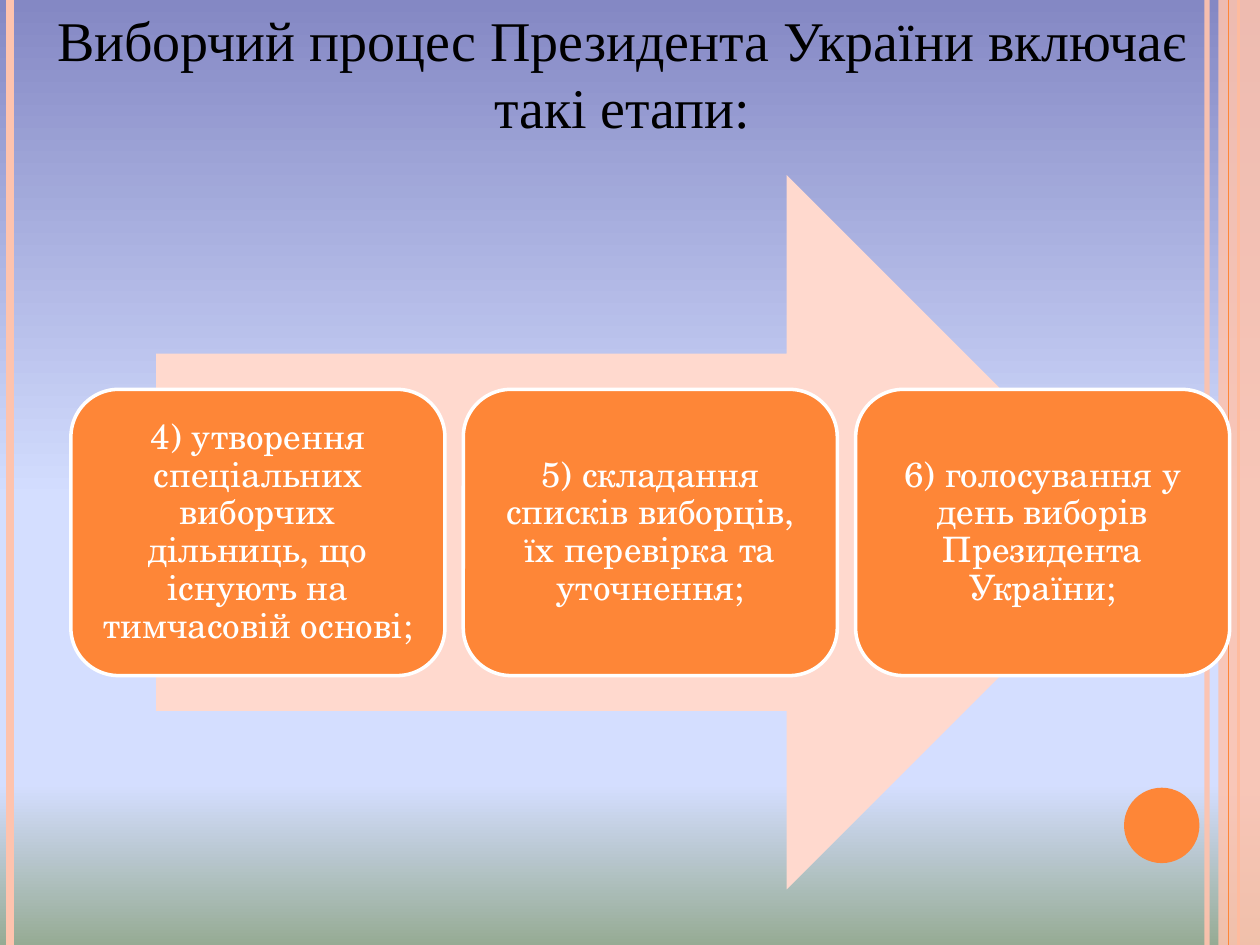
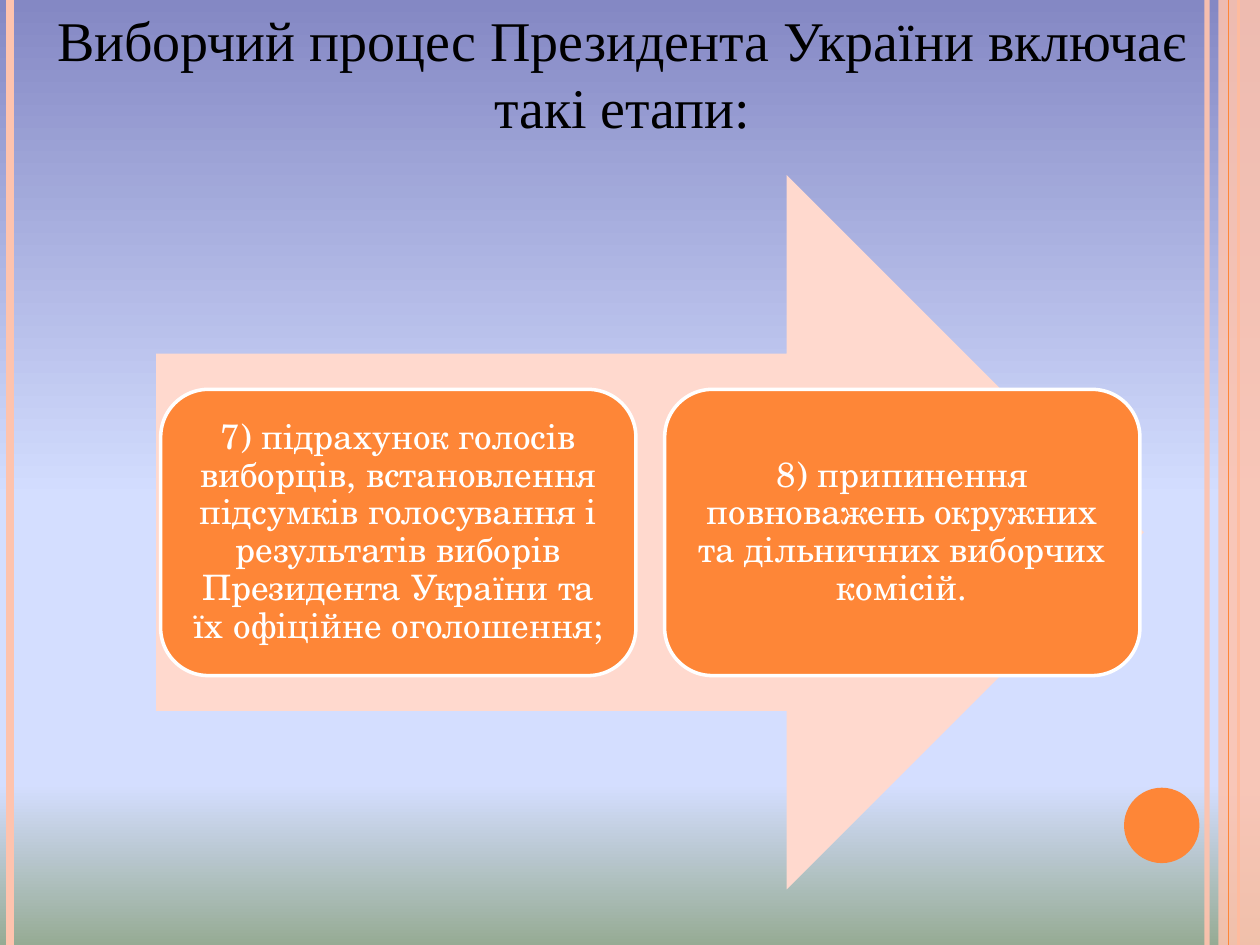
import copy

import pptx
import pptx.dml.color
import pptx.enum.shapes
import pptx.enum.text
import pptx.oxml
import pptx.oxml.ns
import pptx.util
from pptx.util import Cm

SLIDE_WIDTH, SLIDE_HEIGHT = 25.4, 19.05
SHAPES = pptx.enum.shapes.MSO_SHAPE
COLOURS = {
    "sky": "8488C4",
    "haze": "D4DEFF",
    "grass": "96AB94",
    "orange": "FE8637",
    "peach": "FEC3AE",
    "pale": "FFD9CE",
    "white": "FFFFFF",
    "black": "000000",
}
BACKGROUND = [(0, "sky"), (53, "haze"), (83, "haze"), (100, "grass")]
TITLE = "Виборчий процес Президента України включає такі етапи:"
TITLE_FONT = {"name": "Times New Roman", "size": pptx.util.Pt(32)}
CARD_FONT = {"name": "TeX Gyre Schola", "size": pptx.util.Pt(20)}
ROW_CENTRE, CARD_TOP, CARD_HEIGHT = 13.11, 7.85, 5.77

STAGES = [
    {
        "width": 7.54,
        "gap": 0.37,
        "texts": [
            "4) утворення спеціальних виборчих дільниць, що існують на тимчасовій основі;",
            "5) складання списків виборців, їх перевірка та уточнення;",
            "6) голосування у день виборів Президента України;",
        ],
    },
    {
        "width": 9.58,
        "gap": 0.58,
        "texts": [
            "7) підрахунок голосів виборців, встановлення підсумків голосування і "
            "результатів виборів Президента України та їх офіційне оголошення;",
            "8) припинення повноважень окружних та дільничних виборчих комісій.",
        ],
    },
]


def apply(target, values):
    for name, value in values.items():
        setattr(target, name, value)


def rgb(colour):
    return pptx.dml.color.RGBColor.from_string(COLOURS[colour])


def set_opacity(fill_parent, percent):
    for colour in fill_parent.xpath(".//a:srgbClr"):
        alpha = pptx.oxml.parse_xml(
            f'<a:alpha {pptx.oxml.ns.nsdecls("a")} val="{percent * 1000}"/>'
        )
        colour.append(alpha)


class Slides:
    def __init__(self):
        self.deck = pptx.Presentation()
        apply(self.deck, {"slide_width": Cm(SLIDE_WIDTH), "slide_height": Cm(SLIDE_HEIGHT)})
        self.page = None

    def add_page(self):
        self.page = self.deck.slides.add_slide(self.deck.slide_layouts[6])
        self.background()
        self.side_bands()

    def background(self):
        fill = self.page.background.fill
        fill.gradient()
        fill.gradient_angle = 270
        stop_list = self.page.element.xpath(".//a:gsLst")[0]
        while len(stop_list) < len(BACKGROUND):
            stop_list.append(copy.deepcopy(stop_list[0]))
        for stop, (position, colour) in zip(fill.gradient_stops, BACKGROUND):
            stop.position = position / 100
            stop.color.rgb = rgb(colour)

    def side_bands(self):
        self.vertical_line(24.33, "peach", 3, 93)
        self.vertical_line(0.2, "peach", 4.5)
        self.vertical_line(24.97, "orange", 1.5)
        band = self.shape(SHAPES.RECTANGLE, 24.56, 0, 0.84, SLIDE_HEIGHT, "peach")
        set_opacity(band.element.spPr, 87)
        self.vertical_line(24.77, "orange", 0.75)
        self.shape(SHAPES.OVAL, 22.66, 15.88, 1.52, 1.52, "orange")

    def vertical_line(self, x, colour, weight, opacity=100):
        line = self.page.shapes.add_connector(
            pptx.enum.shapes.MSO_CONNECTOR.STRAIGHT, Cm(x), 0, Cm(x), Cm(SLIDE_HEIGHT)
        )
        line.line.color.rgb = rgb(colour)
        line.line.width = pptx.util.Pt(weight)
        properties = line.element.spPr
        if opacity < 100:
            set_opacity(properties, opacity)
        properties.append(pptx.oxml.parse_xml(f'<a:effectLst {pptx.oxml.ns.nsdecls("a")}/>'))

    def shape(self, kind, left, top, width, height, fill, outline=None):
        box = self.page.shapes.add_shape(kind, Cm(left), Cm(top), Cm(width), Cm(height))
        box.shadow.inherit = False
        box.fill.solid()
        box.fill.fore_color.rgb = rgb(fill)
        if outline:
            box.line.color.rgb = rgb(outline)
            box.line.width = pptx.util.Pt(2)
        else:
            box.line.fill.background()
        return box

    def add_text(self, box, text, font, colour, spacing=1.0, frame_format=None):
        frame = box.text_frame
        middle = pptx.enum.text.MSO_ANCHOR.MIDDLE
        apply(frame, {"word_wrap": True, "vertical_anchor": middle, **(frame_format or {})})
        para = frame.paragraphs[0]
        apply(para, {"alignment": pptx.enum.text.PP_ALIGN.CENTER, "line_spacing": spacing})
        span = para.add_run()
        span.text = text
        apply(span.font, font)
        span.font.color.rgb = rgb(colour)

    def title(self, text):
        box = self.page.shapes.add_textbox(Cm(0.79), Cm(-0.03), Cm(23.52), Cm(3))
        self.add_text(box, text, TITLE_FONT, "black")

    def arrow(self):
        self.shape(SHAPES.RIGHT_ARROW, 3.15, 3.53, 19.91, 14.4, "pale")

    def cards(self, texts, width, gap):
        step = width + gap
        first = ROW_CENTRE - (len(texts) * step - gap) / 2
        sides = ("left", "top", "right", "bottom")
        margins = {f"margin_{side}": Cm(0.2) for side in sides}
        for index, text in enumerate(texts):
            card = self.shape(
                SHAPES.ROUNDED_RECTANGLE, first + index * step, CARD_TOP,
                width, CARD_HEIGHT, "orange", "white",
            )
            self.add_text(card, text, CARD_FONT, "white", 0.9, margins)


def main():
    slides = Slides()
    for stage in STAGES:
        slides.add_page()
        slides.arrow()
        slides.cards(**stage)
        slides.title(TITLE)
    slides.deck.save("out.pptx")


if __name__ == "__main__":
    main()
